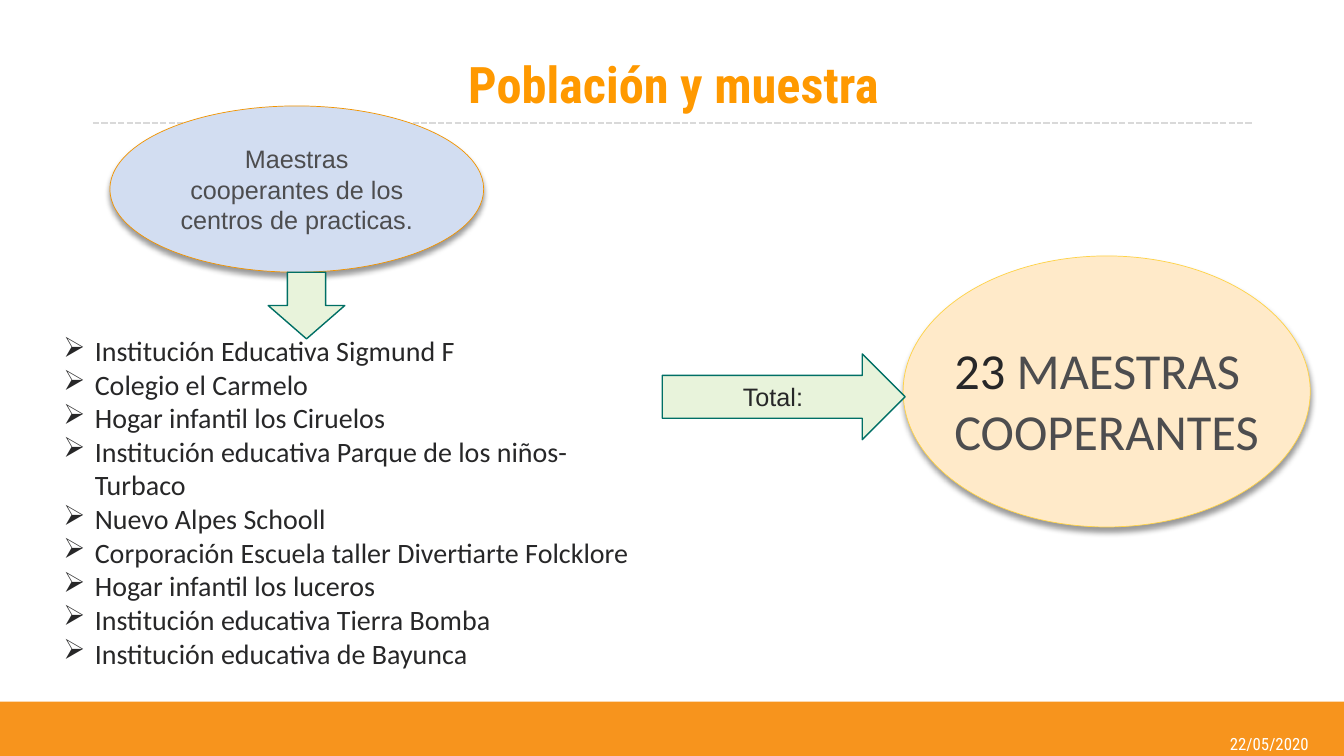
from lxml import etree
from pptx import Presentation
from pptx.dml.color import RGBColor
from pptx.enum.dml import MSO_LINE
from pptx.enum.shapes import MSO_CONNECTOR, MSO_SHAPE
from pptx.enum.text import MSO_ANCHOR, PP_ALIGN
from pptx.oxml import parse_xml
from pptx.oxml.ns import nsdecls, qn
from pptx.util import Cm, Pt

RECTANGLE, OVAL = MSO_SHAPE.RECTANGLE, MSO_SHAPE.OVAL
DOWN_ARROW, RIGHT_ARROW = MSO_SHAPE.DOWN_ARROW, MSO_SHAPE.RIGHT_ARROW
STRAIGHT, DASHED = MSO_CONNECTOR.STRAIGHT, MSO_LINE.SQUARE_DOT
MIDDLE = MSO_ANCHOR.MIDDLE
LEFT, CENTER = PP_ALIGN.LEFT, PP_ALIGN.CENTER

ORANGE, TITLE_ORANGE, WHITE = "F7941D", "FF9900", "FFFFFF"
DARK, GREY = "272728", "4D4D4F"
PALE_GREEN, GREEN = "E8F3DB", "006F65"

SOFT_SHADOW = (
    f'<a:outerShdw {nsdecls("a")} blurRad="50800" dist="38100" dir="5400000" rotWithShape="0">'
    '<a:srgbClr val="000000"><a:alpha val="40000"/></a:srgbClr></a:outerShdw>'
)

INSTITUTIONS = [
    "Institución Educativa Sigmund F",
    "Colegio el Carmelo",
    "Hogar infantil los Ciruelos",
    "Institución educativa Parque de los niños- Turbaco",
    "Nuevo Alpes Schooll",
    "Corporación Escuela taller Divertiarte Folcklore",
    "Hogar infantil los luceros",
    "Institución educativa Tierra Bomba",
    "Institución educativa de Bayunca",
]


def add_figure(kind, box, fill, line=None, width=1, shadow=False):
    figure = slide.shapes.add_shape(kind, *map(Cm, box))
    figure.shadow.inherit = False
    figure.fill.solid()
    figure.fill.fore_color.rgb = RGBColor.from_string(fill)
    if line:
        figure.line.color.rgb = RGBColor.from_string(line)
        figure.line.width = Pt(width)
    else:
        figure.line.fill.background()
    if shadow:
        effects = figure._element.spPr.find(qn("a:effectLst"))
        effects.append(parse_xml(SOFT_SHADOW))
    return figure


def write(shape, text, size, font, color, align=LEFT):
    frame = shape.text_frame
    frame.word_wrap = True
    frame.text = text
    for paragraph in frame.paragraphs:
        paragraph.alignment = align
        for run in paragraph.runs:
            run.font.size = Pt(size)
            run.font.name = font
            run.font.color.rgb = RGBColor.from_string(color)
    return frame


presentation = Presentation()
presentation.slide_width, presentation.slide_height = Cm(33.87), Cm(19.05)
slide = presentation.slides.add_slide(presentation.slide_layouts[6])

# Footer, date and rule under the title
add_figure(RECTANGLE, (0, 17.68, 33.87, 1.37), ORANGE)
date = slide.shapes.add_textbox(Cm(30.2), Cm(18.49), Cm(3.58), Cm(0.53))
date_frame = write(date, "22/05/2020", 12, "Roboto Condensed", WHITE, CENTER)
date_frame.vertical_anchor = MIDDLE

rule = slide.shapes.add_connector(STRAIGHT, Cm(2.34), Cm(3.1), Cm(31.55), Cm(3.1))
rule.line.color.rgb = RGBColor.from_string("D9D9D9")
rule.line.width = Pt(1.5)
rule.line.dash_style = DASHED
etree.SubElement(rule._element.spPr, qn("a:effectLst"))

# Population and sample ovals
add_figure(OVAL, (22.76, 6.45, 10.26, 6.83), "FFEAC9", "FFD347", 0.5, shadow=True)
population = add_figure(OVAL, (2.77, 2.67, 9.42, 4.19), "D2DDF1", "F29400", 0.5, shadow=True)
population_frame = write(population, "Maestras cooperantes de los centros de practicas.",
                         18, "Arial", GREY, CENTER)
population_frame.vertical_anchor = MIDDLE
population_frame.margin_left = population_frame.margin_right = Cm(0.32)

title = slide.shapes.add_textbox(Cm(11.2), Cm(1.02), Cm(14.33), Cm(1.93))
title_frame = write(title, "Población y muestra", 36, "Roboto Condensed", TITLE_ORANGE)
title_frame.margin_left = Cm(0.6)
title_frame.margin_top = Cm(0.33)
title_frame.paragraphs[0].runs[0].font.bold = True

# Institutions taking part
add_figure(DOWN_ARROW, (6.76, 6.86, 1.93, 1.68), PALE_GREEN, GREEN)
institutions = slide.shapes.add_textbox(Cm(1.35), Cm(8.28), Cm(15.24), Cm(8.81))
institutions_frame = write(institutions, "\n".join(INSTITUTIONS), 20, "Calibri", DARK)
for institution in institutions_frame.paragraphs:
    properties = institution._p.get_or_add_pPr()
    properties.set("marL", str(Cm(0.79)))
    properties.set("indent", str(-Cm(0.79)))
    etree.SubElement(properties, qn("a:buChar"), char="➢")

# Total sample
total_arrow = add_figure(RIGHT_ARROW, (16.69, 8.92, 6.12, 2.16), PALE_GREEN, GREEN)
write(total_arrow, "Total:", 18, "Arial", DARK, CENTER).vertical_anchor = MIDDLE

sample = slide.shapes.add_textbox(Cm(23.8), Cm(8.43), Cm(8.59), Cm(3.33))
sample_frame = write(sample, "23 ", 36, "Calibri", DARK)
teachers = sample_frame.paragraphs[0].add_run()
teachers.text = "MAESTRAS COOPERANTES"
teachers.font.size = Pt(36)
teachers.font.name = "Calibri"
teachers.font.color.rgb = RGBColor.from_string(GREY)

presentation.save("out.pptx")
